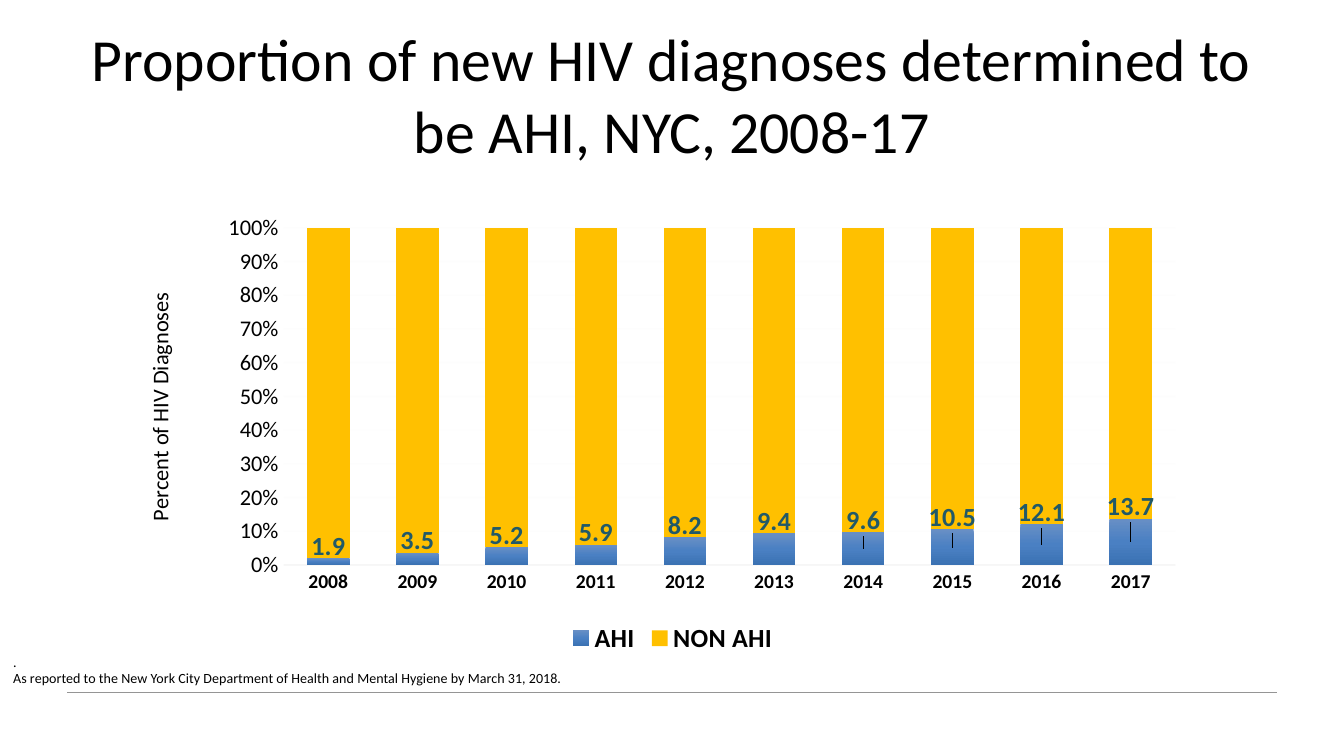
import copy
from dataclasses import dataclass

import pptx
import pptx.chart.data
import pptx.dml.color
import pptx.enum.chart
import pptx.enum.shapes
import pptx.enum.text
import pptx.oxml
import pptx.oxml.ns
import pptx.util
from pptx.util import Cm


def rgb(value):
    return pptx.dml.color.RGBColor.from_string(value)


@dataclass(frozen=True)
class Theme:
    font: str = "Calibri"
    text: str = "000000"
    rule: str = "959595"
    grid: str = "F2F2F2"
    label: str = "215968"
    non_acute: str = "FFC000"
    acute: tuple = ((0, "688FC5"), (0.5, "4A80C3"), (1, "3B72B3"))
    title_size: float = 32
    legend_size: float = 14
    axis_size: float = 12
    category_size: float = 10.5
    chart_size: float = 10
    note_size: float = 7.5


YEARS = [str(year) for year in range(2008, 2018)]
ACUTE = [1.9, 3.5, 5.2, 5.9, 8.2, 9.4, 9.6, 10.5, 12.1, 13.7]
NON_ACUTE = [98, 97, 95, 94, 92, 91, 90, 89, 88, 86]
PLOT_AREA = {"x": 0.144, "y": 0.124, "w": 0.816, "h": 0.684}
LABEL_LIFT = 0.025  # label centre above its bar, as a share of chart height


def layout_element(**places):
    """Manual chart layout; w and h are given for a plot area only."""
    names = ["xMode", "yMode"] if "w" in places else []
    parts = '<c:layoutTarget val="inner"/>' if "w" in places else ""
    if "edge" in places:
        names = ["xMode", "yMode"]
        places.pop("edge")
    parts += "".join(f'<c:{name} val="edge"/>' for name in names)
    parts += "".join(f'<c:{name} val="{value:.3f}"/>' for name, value in places.items())
    return pptx.oxml.parse_xml(
        f'<c:layout {pptx.oxml.ns.nsdecls("c")}><c:manualLayout>{parts}'
        "</c:manualLayout></c:layout>")


def set_layout(parent, after, **places):
    """Put a layout into parent, behind its child named after (or first)."""
    for old in parent.xpath("./c:layout"):
        parent.remove(old)
    previous = parent.xpath(f"./{after}") if after else []
    parent.insert(parent.index(previous[0]) + 1 if previous else 0,
                  layout_element(**places))


class SlideBuilder:
    def __init__(self, slide, theme):
        self.slide = slide
        self.theme = theme

    def style_font(self, font, size, color=None, bold=False):
        font.name = self.theme.font
        font.size = pptx.util.Pt(size)
        font.bold = bold
        font.color.rgb = rgb(color or self.theme.text)

    def style_line(self, line, color, width, opacity=None):
        line.color.rgb = rgb(color)
        line.width = pptx.util.Pt(width)
        if opacity:
            for element in line.fill._xPr.xpath(".//a:srgbClr"):
                alpha = element.makeelement(pptx.oxml.ns.qn("a:alpha"),
                                            {"val": str(opacity * 1000)})
                element.append(alpha)

    def rule(self, left, top, right):
        connector = self.slide.shapes.add_connector(
            pptx.enum.shapes.MSO_CONNECTOR.STRAIGHT, left, top, right, top)
        self.style_line(connector.line, self.theme.rule, 0.25)
        properties = connector._element.spPr
        properties.append(properties.makeelement(pptx.oxml.ns.qn("a:effectLst"), {}))

    def text(self, box, lines, size, align, anchor):
        frame = self.slide.shapes.add_textbox(*box).text_frame
        frame.word_wrap = True
        frame.vertical_anchor = anchor
        for index, line in enumerate(lines):
            paragraph = frame.add_paragraph() if index else frame.paragraphs[0]
            paragraph.alignment = align
            run = paragraph.add_run()
            run.text = line
            self.style_font(run.font, size)

    def stacked_chart(self, box, categories, series, axis_title):
        data = pptx.chart.data.CategoryChartData()
        data.categories = categories
        for name, values in series.items():
            data.add_series(name, values)
        chart = self.slide.shapes.add_chart(
            pptx.enum.chart.XL_CHART_TYPE.COLUMN_STACKED_100, *box, data).chart
        self.style_font(chart.font, self.theme.chart_size)
        chart.has_title = False
        plot = chart.plots[0]
        plot.vary_by_categories = False
        plot.gap_width, plot.overlap = 110, 100
        set_layout(chart._chartSpace.xpath(".//c:plotArea")[0], None, **PLOT_AREA)

        # Legend
        chart.has_legend = True
        chart.legend.position = pptx.enum.chart.XL_LEGEND_POSITION.BOTTOM
        chart.legend.include_in_layout = False
        self.style_font(chart.legend.font, self.theme.legend_size, bold=True)

        self.axes(chart, axis_title)
        acute, non_acute = plot.series
        non_acute.format.fill.solid()
        non_acute.format.fill.fore_color.rgb = rgb(self.theme.non_acute)
        self.gradient(acute.format.fill)
        self.labels(acute)

    def axes(self, chart, title):
        none = pptx.enum.chart.XL_TICK_MARK.NONE
        category, value = chart.category_axis, chart.value_axis
        for axis in (category, value):
            axis.major_tick_mark = axis.minor_tick_mark = none
        self.style_font(category.tick_labels.font, self.theme.category_size, bold=True)
        self.style_line(category.format.line, self.theme.grid, 1, 54)
        self.style_font(value.tick_labels.font, self.theme.axis_size)
        value.tick_labels.number_format = "0%"
        value.tick_labels.number_format_is_linked = False
        value.format.line.fill.background()
        self.style_line(value.major_gridlines.format.line, self.theme.grid, 0.75, 10)
        run = value.axis_title.text_frame.paragraphs[0].add_run()
        run.text = title
        self.style_font(run.font, self.theme.axis_size)
        set_layout(value.axis_title._element, "c:tx", edge=True, x=0.013, y=0.247)

    def gradient(self, fill):
        fill.gradient()
        fill.gradient_angle = 270
        stop_list = fill._xPr.xpath(".//a:gsLst")[0]
        stop_list.append(copy.deepcopy(stop_list[0]))
        for stop, (position, color) in zip(fill.gradient_stops, self.theme.acute):
            stop.position = position
            stop.color.rgb = rgb(color)

    def labels(self, series):
        """Lift every label from the middle of its bar to just above it."""
        for index, value in enumerate(series.values):
            label = series.points[index].data_label
            self.style_font(label.font, self.theme.legend_size, self.theme.label, True)
            label.position = pptx.enum.chart.XL_LABEL_POSITION.CENTER
            element = series._element.xpath(f".//c:dLbl[c:idx/@val='{index}']")[0]
            half_bar = value / 100 * PLOT_AREA["h"] / 2
            set_layout(element, "c:idx", x=0, y=-(half_bar + LABEL_LIFT))


def main():
    presentation = pptx.Presentation()
    presentation.slide_width, presentation.slide_height = Cm(25.4), Cm(14.29)
    theme = Theme()
    builder = SlideBuilder(
        presentation.slides.add_slide(presentation.slide_layouts[6]), theme)
    align, anchor = pptx.enum.text.PP_ALIGN, pptx.enum.text.MSO_ANCHOR

    # Footer rule and title
    builder.rule(Cm(1.27), Cm(13.08), Cm(24.13))
    builder.text((Cm(1.27), Cm(0.58), Cm(22.86), Cm(2.39)),
                 ["Proportion of new HIV diagnoses determined to be AHI, NYC, 2008-17"],
                 theme.title_size, align.CENTER, anchor.MIDDLE)

    # Chart
    builder.stacked_chart((Cm(2.39), Cm(3.15), Cm(20.65), Cm(9.32)), YEARS,
                          {"AHI": ACUTE, "NON AHI": NON_ACUTE},
                          "Percent of HIV Diagnoses")

    # Source note
    builder.text((Cm(0), Cm(12.22), Cm(10.9), Cm(0.89)),
                 [".", "As reported to the New York City Department of Health "
                  "and Mental Hygiene by March 31, 2018."],
                 theme.note_size, align.LEFT, anchor.TOP)

    presentation.save("out.pptx")


if __name__ == "__main__":
    main()
